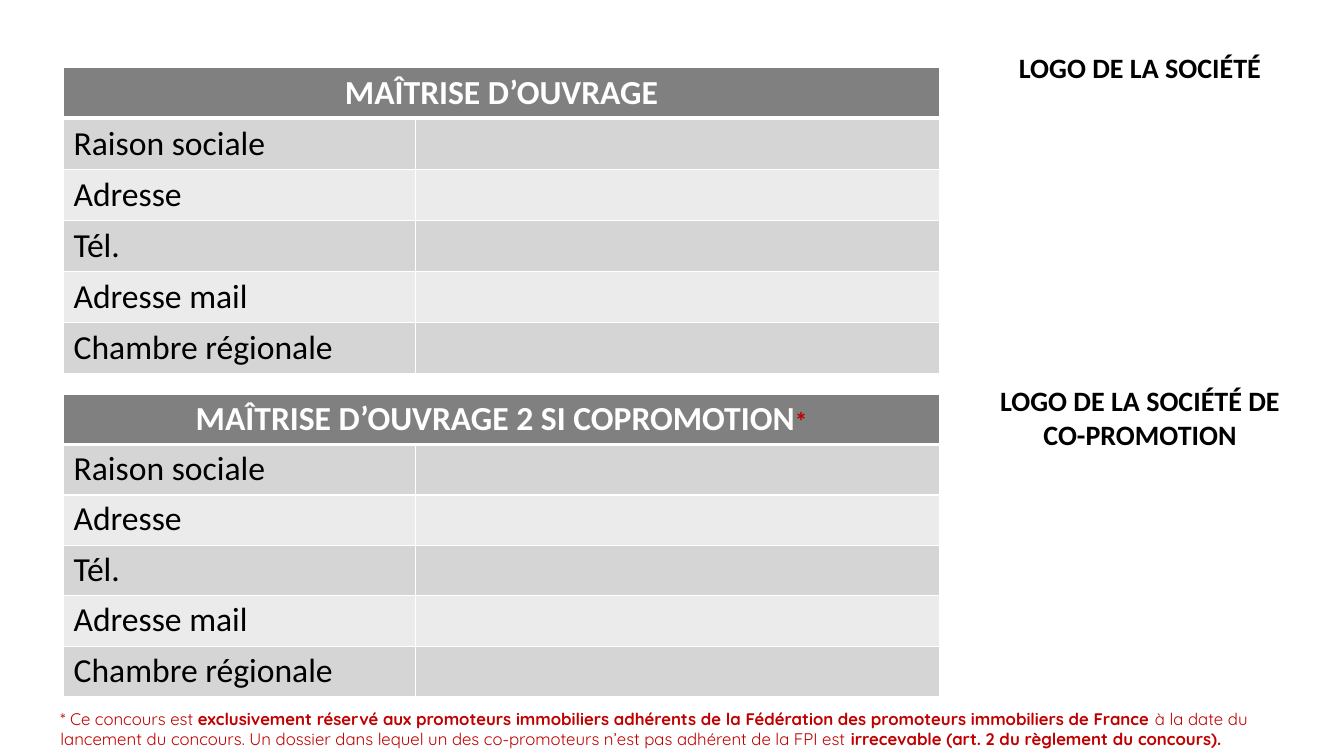
from dataclasses import dataclass

from lxml.etree import SubElement
from pptx import Presentation
from pptx.dml.color import RGBColor
from pptx.enum.text import MSO_AUTO_SIZE as Fit, PP_ALIGN as Align
from pptx.oxml.ns import qn
from pptx.util import Inches, Pt

WHITE = RGBColor(0xFF, 0xFF, 0xFF)
BLACK = RGBColor(0x00, 0x00, 0x00)
RED = RGBColor(0xC0, 0x00, 0x00)
HEAD = RGBColor(0x80, 0x80, 0x80)
DARK = RGBColor(0xD5, 0xD5, 0xD5)
LIGHT = RGBColor(0xEB, 0xEB, 0xEB)

WIDE, HIGH = Inches(13.33), Inches(7.5)
FIELDS = ["Raison sociale", "Adresse", "Tél.", "Adresse mail", "Chambre régionale"]

# Shares of the slide, in percent
LEFT, COLS, ROW = 4.73, (26.18, 39), 6.67
SIDE, SPAN = 72.3, 25.05


@dataclass
class Bit:
    text: str
    size: int
    color: RGBColor = BLACK
    bold: bool = False
    font: str = "Calibri"


@dataclass
class Form:
    top: float
    pad: float
    title: list[Bit]


@dataclass
class Label:
    left: float
    top: float
    width: float
    height: float
    bits: list[Bit]
    align: Align = Align.CENTER


def across(share: float) -> int:
    return round(WIDE * share / 100)


def down(share: float) -> int:
    return round(HIGH * share / 100)


def write(frame, bits: list[Bit], align: Align) -> None:
    para = frame.paragraphs[0]
    para.alignment = align
    for bit in bits:
        run = para.add_run()
        run.text = bit.text
        font = run.font
        font.name, font.size, font.bold = bit.font, Pt(bit.size), bit.bold
        font.color.rgb = bit.color


def edge(cell, base: int) -> None:
    """Draw white borders, with the given width at the bottom."""
    props = cell._tc.get_or_add_tcPr()
    for spot, side in enumerate("LRTB"):
        width = Pt(base if side == "B" else 1)
        line = SubElement(props, qn(f"a:ln{side}"), w=str(width))
        fill = SubElement(line, qn("a:solidFill"))
        SubElement(fill, qn("a:srgbClr"), val=str(WHITE))
        props.insert(spot, line)


def draw_form(slide, form: Form) -> None:
    count = len(FIELDS) + 1
    table = slide.shapes.add_table(
        count, len(COLS), across(LEFT), down(form.top),
        across(sum(COLS)), down(ROW * count)).table
    table.horz_banding = False
    for col, share in zip(table.columns, COLS):
        col.width = across(share)
    for num, row in enumerate(table.rows):
        row.height = down(ROW)
        for cell in row.cells:
            cell.margin_top = cell.margin_bottom = Inches(form.pad)
            cell.fill.solid()
            cell.fill.fore_color.rgb = HEAD if num == 0 else DARK if num % 2 else LIGHT
            edge(cell, 1 if num else 3)
    title = table.cell(0, 0)
    title.merge(table.cell(0, 1))
    write(title.text_frame, form.title, Align.CENTER)
    for num, field in enumerate(FIELDS, 1):
        write(table.cell(num, 0).text_frame, [Bit(field, 24)], Align.LEFT)


def draw_label(slide, label: Label) -> None:
    box = slide.shapes.add_textbox(
        across(label.left), down(label.top), across(label.width), down(label.height))
    frame = box.text_frame
    frame.word_wrap = True
    frame.auto_size = Fit.SHAPE_TO_FIT_TEXT
    write(frame, label.bits, label.align)


def note(text: str, bold: bool = False) -> Bit:
    return Bit(text, 12, RED, bold, "Quicksand")


FORMS = [
    Form(8.87, 0.05, [Bit("MAÎTRISE D’OUVRAGE", 24, WHITE, True)]),
    Form(52.13, 0.04, [Bit("MAÎTRISE D’OUVRAGE 2 SI COPROMOTION", 24, WHITE, True),
                       Bit("*", 18, RED, True)]),
]
LABELS = [
    Label(SIDE, 6, SPAN, 5.87, [Bit("LOGO DE LA SOCIÉTÉ", 20, bold=True)]),
    Label(SIDE, 50.13, SPAN, 10.27,
          [Bit("LOGO DE LA SOCIÉTÉ DE CO-PROMOTION", 20, bold=True)]),
    Label(3.75, 93.07, 93.67, 6.67, [
        note("* Ce concours est "),
        note("exclusivement réservé aux promoteurs immobiliers adhérents de la "
             "Fédération des promoteurs immobiliers de France ", True),
        note("à la date du lancement du concours. Un dossier dans lequel un des "
             "co-promoteurs n’est pas adhérent de la FPI est "),
        note("irrecevable (art. 2 du règlement du concours).", True),
    ], Align.LEFT),
]


def main() -> None:
    deck = Presentation()
    deck.slide_width, deck.slide_height = WIDE, HIGH
    slide = deck.slides.add_slide(deck.slide_layouts[6])
    # Company forms
    for form in FORMS:
        draw_form(slide, form)
    # Logo captions and footnote
    for label in LABELS:
        draw_label(slide, label)
    deck.save("out.pptx")


if __name__ == "__main__":
    main()
